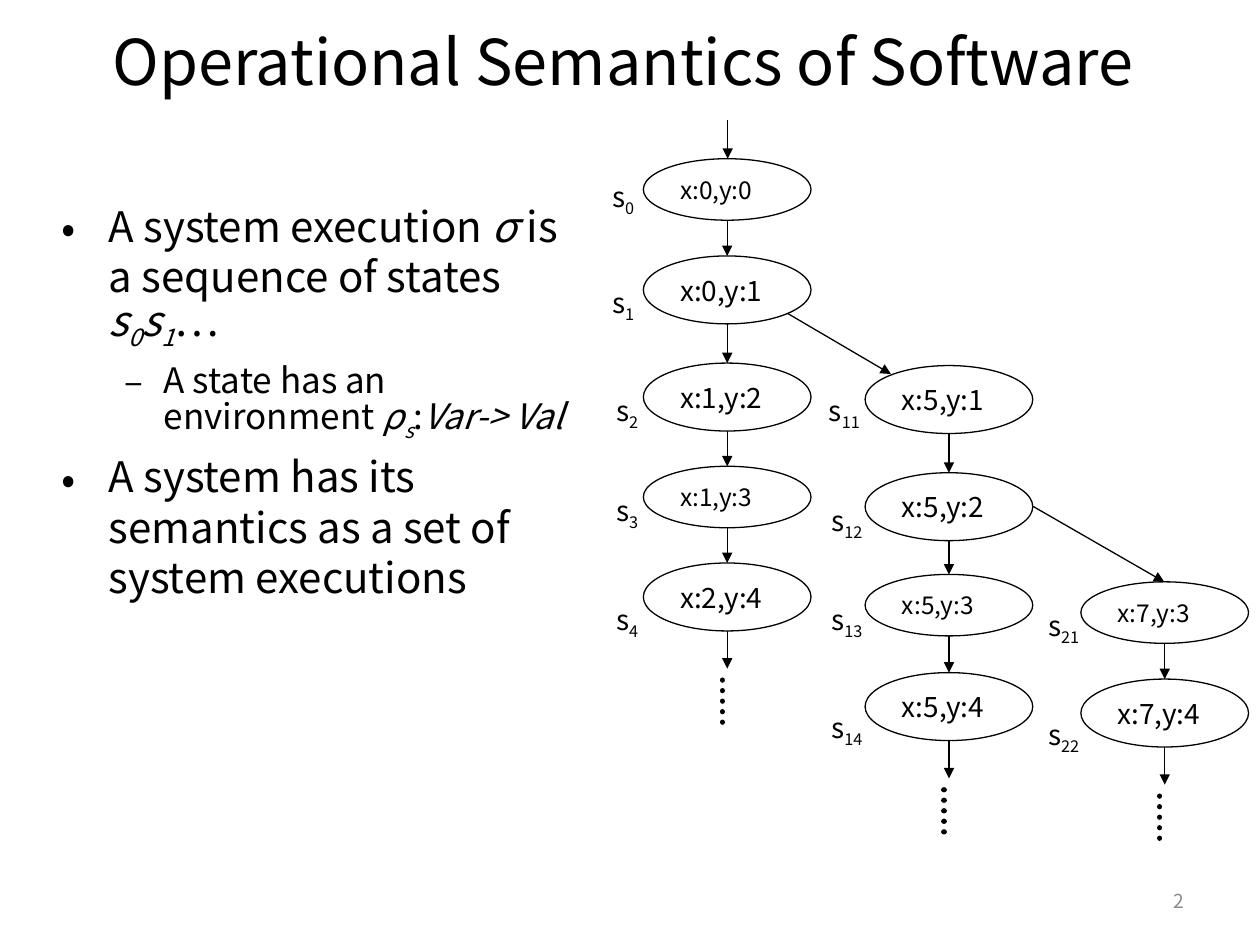
from dataclasses import dataclass
from lxml.etree import SubElement as Sub
from pptx import Presentation
from pptx.dml.color import RGBColor as Rgb
from pptx.enum.dml import MSO_LINE as Dash
from pptx.enum.shapes import MSO_CONNECTOR as Conn, MSO_SHAPE as Kind
from pptx.enum.text import MSO_ANCHOR as Anchor, MSO_AUTO_SIZE as Fit, PP_ALIGN as Align
from pptx.oxml.ns import qn
from pptx.util import Cm, Pt


@dataclass(frozen=True)
class Theme:
    font: str = "Noto Sans CJK KR"
    ink: Rgb = Rgb(0, 0, 0)
    gray: Rgb = Rgb(0x8C, 0x8C, 0x8C)
    title: int = 36
    body: int = 24
    sub: int = 20
    node: int = 16
    small: int = 14
    page: int = 11
    thin: float = 0.75
    dots: float = 3


theme = Theme()


def write(para, size, runs, color=theme.ink):
    for text, style in runs:
        run = para.add_run()
        run.text = text
        font = run.font
        font.name, font.size = theme.font, Pt(size)
        font.color.rgb = color
        font.italic = "i" in style
        props = font._element
        if "_" in style:
            props.set("baseline", "-25000")
        for tag in ("a:ea", "a:cs"):
            Sub(props, qn(tag), typeface=theme.font)


def link(x1, y1, x2, y2, dots=False):
    line = slide.shapes.add_connector(Conn.STRAIGHT, Cm(x1), Cm(y1), Cm(x2), Cm(y2))
    line.line.color.rgb = theme.ink
    line.line.width = Pt(theme.dots if dots else theme.thin)
    props = line.line._get_or_add_ln()
    if dots:
        line.line.dash_style = Dash.ROUND_DOT
        props.set("cap", "rnd")
    else:
        Sub(props, qn("a:tailEnd"), type="triangle")
    Sub(line._element.spPr, qn("a:effectLst"))


deck = Presentation()
deck.slide_width, deck.slide_height = Cm(25.4), Cm(19.05)
slide = deck.slides.add_slide(deck.slide_layouts[5])

title = slide.shapes.title
title.left, title.top, title.width, title.height = Cm(0), Cm(0.46), Cm(25.4), Cm(1.52)
frame = title.text_frame
frame.auto_size = Fit.NONE
frame.vertical_anchor = Anchor.MIDDLE
frame.paragraphs[0].alignment = Align.CENTER
write(frame.paragraphs[0], theme.title, [("Operational Semantics of Software ", "")])

points = [
    (0, theme.body, [("A system execution ", ""), ("σ ", "i"), ("is a sequence of states ", ""),
                     ("s", "i"), ("0", "i_"), ("s", "i"), ("1", "i_"), ("…", "")]),
    (1, theme.sub, [("A state has an environment ", ""), ("ρ", "i"), ("s", "i_"),
                    (":", ""), ("Var-> Val", "i")]),
    (0, theme.body, [("A system has its semantics as a set of system executions", "")]),
]
marks = [("•", 0.95, 0.95), ("–", 2.06, 0.79)]
frame = slide.shapes.add_textbox(Cm(0.99), Cm(2.72), Cm(11.23), Cm(14.4)).text_frame
frame.word_wrap = True
frame.margin_top, frame.margin_right = Cm(1.32), Cm(0.5)
for i, (level, size, runs) in enumerate(points):
    para = frame.paragraphs[0] if i == 0 else frame.add_paragraph()
    para.level = level
    para.space_before = Pt(0.2 * size)
    para.line_spacing = Pt(1.2 * size)
    mark, left, hang = marks[level]
    props = para._p.get_or_add_pPr()
    props.set("marL", str(Cm(left)))
    props.set("indent", str(-Cm(hang)))
    Sub(props, qn("a:buFont"), typeface=theme.font)
    Sub(props, qn("a:buChar"), char=mark)
    write(para, size, runs)

frame = slide.shapes.add_textbox(Cm(22.02), Cm(17.65), Cm(2.11), Cm(1.02)).text_frame
frame.word_wrap = True
frame.vertical_anchor = Anchor.MIDDLE
frame.paragraphs[0].alignment = Align.RIGHT
write(frame.paragraphs[0], theme.page, [("2", "")], theme.gray)

wide = 3.38
high = {theme.small: 1.24, theme.node: 1.37}
big, small = theme.node, theme.small
paths = [
    (12.97, 1.04, [
        (3.2, small, "x:0,y:0", "0", 12.09, 3.58),
        (5.16, big, "x:0,y:1", "1", 12.09, 5.72),
        (7.32, big, "x:1,y:2", "2", 12.17, 7.9),
        (9.4, small, "x:1,y:3", "3", 12.17, 9.91),
        (11.35, big, "x:2,y:4", "4", 12.17, 12.12),
    ]),
    (17.44, 1.24, [
        (7.37, big, "x:5,y:1", "11", 16.46, 7.9),
        (9.53, big, "x:5,y:2", "12", 16.51, 10.11),
        (11.58, small, "x:5,y:3", "13", 16.51, 12.12),
        (13.56, big, "x:5,y:4", "14", 16.51, 14.3),
    ]),
    (21.79, 1.24, [
        (11.73, small, "x:7,y:3", "21", 20.88, 12.24),
        (13.69, big, "x:7,y:4", "22", 20.88, 14.43),
    ]),
]
for left, room, nodes in paths:
    mid = left + wide / 2
    end = None
    for top, size, text, index, x, y in nodes:
        oval = slide.shapes.add_shape(Kind.OVAL, Cm(left), Cm(top), Cm(wide), Cm(high[size]))
        oval.shadow.inherit = False
        oval.fill.background()
        oval.line.color.rgb = theme.ink
        oval.line.width = Pt(theme.thin)
        frame = oval.text_frame
        frame.vertical_anchor = Anchor.MIDDLE
        label = slide.shapes.add_textbox(Cm(x), Cm(y), Cm(room), Cm(0.94)).text_frame
        label.word_wrap = True
        for para, points, runs in (
            (frame.paragraphs[0], size, [(text, "")]),
            (label.paragraphs[0], big, [("s", ""), (index, "_")]),
        ):
            para.alignment = Align.LEFT
            para.line_spacing = Pt(1.2 * points)
            write(para, points, runs)
        if end:
            link(mid, end, mid, top)
        end = top + high[size]
    link(mid, end, mid, end + 0.76)
    link(mid - 0.1, end + 0.99, mid - 0.1, end + 1.99, dots=True)

for ends in [(14.67, 2.41, 14.67, 3.2), (15.88, 6.32, 17.96, 7.54), (20.83, 10.21, 23.47, 11.73)]:
    link(*ends)

deck.save("out.pptx")
